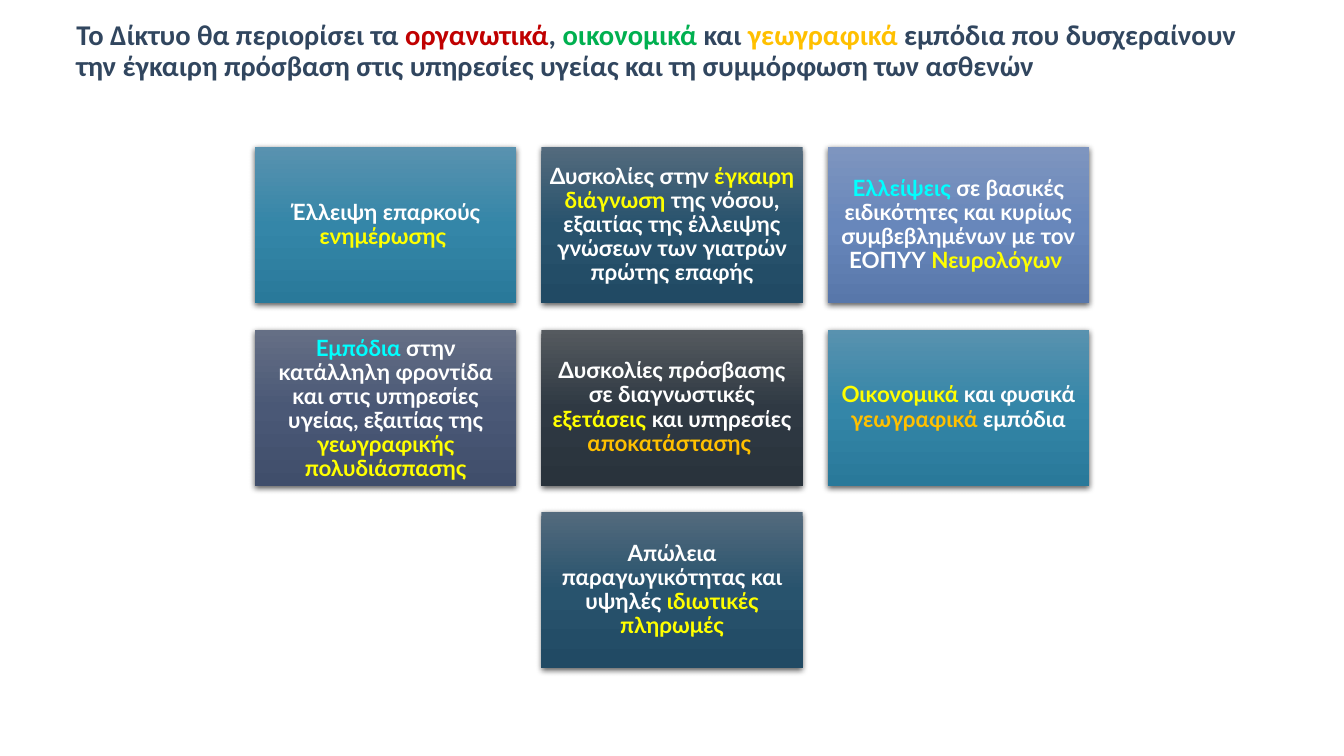
"""Build the slide on the obstacles that the health network will reduce."""
from copy import deepcopy
from dataclasses import dataclass

from lxml.etree import SubElement
from pptx import Presentation
from pptx.dml.color import RGBColor
from pptx.enum.shapes import MSO_SHAPE
from pptx.enum.text import MSO_ANCHOR, PP_ALIGN
from pptx.oxml.ns import qn
from pptx.shapes.autoshape import Shape
from pptx.slide import Slide
from pptx.text.text import _Paragraph as Paragraph
from pptx.util import Inches, Pt

COLORS = {
    "white": "FFFFFF", "yellow": "FFFF00", "cyan": "00FFFF", "amber": "FFC000",
    "navy": "31465F", "red": "C00000", "green": "00B050", "shadow": "000000",
}
GRADIENTS = {
    "teal": ("5992AF", "3486A8", "29799A"),
    "petrol": ("536A7D", "28536D", "214A64"),
    "periwinkle": ("7E95BF", "6887BB", "5877AA"),
    "slate": ("656F85", "4A5876", "404E6B"),
    "charcoal": ("555A5F", "2F3943", "29333C"),
}
CARD_WIDTH, CARD_HEIGHT = 2.59, 1.55
GRID_LEFT, GRID_TOP = 2.53, 1.46
COLUMN_STEP, ROW_STEP = 2.84, 1.81


@dataclass(frozen=True)
class Span:
    text: str
    color: str = "white"


@dataclass(frozen=True)
class Card:
    column: int
    row: int
    gradient: str
    spans: tuple[Span, ...]
    anchor: MSO_ANCHOR = MSO_ANCHOR.MIDDLE


TITLE = (
    Span("Το Δίκτυο θα περιορίσει τα ", "navy"),
    Span("οργανωτικά", "red"),
    Span(", ", "navy"),
    Span("οικονομικά", "green"),
    Span(" και ", "navy"),
    Span("γεωγραφικά", "amber"),
    Span(" εμπόδια που δυσχεραίνουν την έγκαιρη πρόσβαση στις υπηρεσίες υγείας "
         "και τη συμμόρφωση των ασθενών", "navy"),
)
CARDS = (
    Card(0, 0, "teal", (
        Span("Έλλειψη επαρκούς "), Span("ενημέρωσης ", "yellow"))),
    Card(1, 0, "petrol", (
        Span("Δυσκολίες στην "), Span("έγκαιρη διάγνωση", "yellow"),
        Span(" της νόσου, εξαιτίας της έλλειψης γνώσεων των γιατρών πρώτης επαφής"))),
    Card(2, 0, "periwinkle", (
        Span("Ελλείψεις", "cyan"),
        Span(" σε βασικές ειδικότητες και κυρίως συμβεβλημένων με τον ΕΟΠΥΥ "),
        Span("Νευρολόγων ", "yellow"))),
    Card(0, 1, "slate", (
        Span("Εμπόδια", "cyan"),
        Span(" στην κατάλληλη φροντίδα και στις υπηρεσίες υγείας, εξαιτίας της "),
        Span("γεωγραφικής πολυδιάσπασης", "yellow")), MSO_ANCHOR.TOP),
    Card(1, 1, "charcoal", (
        Span("Δυσκολίες πρόσβασης σε διαγνωστικές "), Span("εξετάσεις", "yellow"),
        Span(" και υπηρεσίες "), Span("αποκατάστασης ", "amber"))),
    Card(2, 1, "teal", (
        Span("Οικονομικά", "yellow"), Span(" και φυσικά "),
        Span("γεωγραφικά", "amber"), Span(" εμπόδια"))),
    Card(1, 2, "petrol", (
        Span("Απώλεια παραγωγικότητας και υψηλές "),
        Span("ιδιωτικές πληρωμές", "yellow"))),
)


def write_spans(para: Paragraph, spans: tuple[Span, ...], font_name: str,
                size: float) -> None:
    """Write coloured bold runs into a paragraph."""
    para.line_spacing = 0.9
    for span in spans:
        run = para.add_run()
        run.text = span.text
        run.font.name = font_name
        run.font.size = Pt(size)
        run.font.bold = True
        run.font.color.rgb = RGBColor.from_string(COLORS[span.color])


def fill_gradient(box: Shape, colors: tuple[str, str, str]) -> None:
    """Fill a box with a three-stop gradient running downwards."""
    box.fill.gradient()
    box.fill.gradient_angle = 270
    stop_list = box.element.spPr.find(".//" + qn("a:gsLst"))
    stop_list.append(deepcopy(stop_list[0]))
    for index, (stop, color) in enumerate(zip(box.fill.gradient_stops, colors)):
        stop.color.rgb = RGBColor.from_string(color)
        stop.position = index / 2


def add_shadow(box: Shape) -> None:
    """Give a box a soft shadow below it."""
    box.shadow.inherit = False
    effects = box.element.spPr.find(qn("a:effectLst"))
    shadow = SubElement(effects, qn("a:outerShdw"), blurRad=str(Pt(4.5)),
                        dist=str(Pt(1.5)), dir="5400000", algn="ctr",
                        rotWithShape="0")
    color = SubElement(shadow, qn("a:srgbClr"), val=COLORS["shadow"])
    SubElement(color, qn("a:alpha"), val="63000")


def draw_card(page: Slide, card: Card) -> None:
    """Draw one obstacle card in its grid cell."""
    box = page.shapes.add_shape(
        MSO_SHAPE.RECTANGLE,
        Inches(GRID_LEFT + card.column * COLUMN_STEP),
        Inches(GRID_TOP + card.row * ROW_STEP),
        Inches(CARD_WIDTH), Inches(CARD_HEIGHT))
    fill_gradient(box, GRADIENTS[card.gradient])
    box.line.fill.background()
    add_shadow(box)
    frame = box.text_frame
    frame.word_wrap = True
    frame.vertical_anchor = card.anchor
    frame.margin_left = frame.margin_right = Inches(0.07)
    frame.margin_top = frame.margin_bottom = Inches(0.07)
    para = frame.paragraphs[0]
    para.alignment = PP_ALIGN.CENTER
    write_spans(para, card.spans, "Lato", 16)


def draw_title(page: Slide) -> None:
    """Draw the slide title."""
    box = page.shapes.add_textbox(Inches(0.66), Inches(0.16),
                                  Inches(12.09), Inches(0.98))
    box.text_frame.word_wrap = True
    write_spans(box.text_frame.paragraphs[0], TITLE, "Calibri", 20.4)


def main() -> None:
    """Build and save the deck."""
    deck = Presentation()
    deck.slide_width, deck.slide_height = Inches(13.33), Inches(7.5)
    page = deck.slides.add_slide(deck.slide_layouts[6])
    for card in CARDS:
        draw_card(page, card)
    draw_title(page)
    deck.save("out.pptx")


if __name__ == "__main__":
    main()
